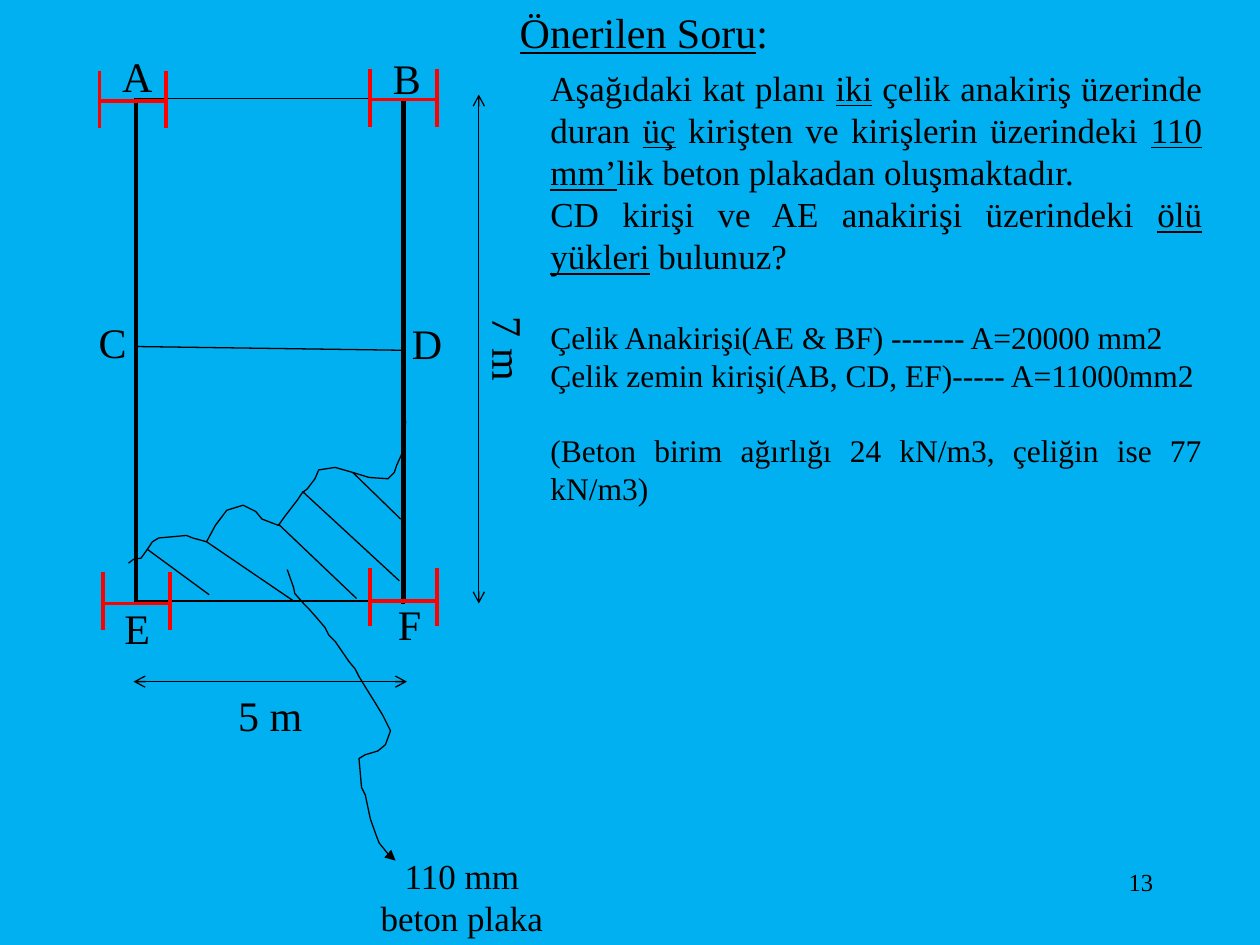
"""Build a slide with a steel floor plan and a dead load question."""
from typing import NamedTuple

from lxml.etree import SubElement
from pptx import Presentation
from pptx.dml.color import RGBColor
from pptx.enum.shapes import MSO_CONNECTOR as Conn, MSO_SHAPE as Kind
from pptx.enum.text import PP_ALIGN as Align
from pptx.oxml.ns import qn
from pptx.util import Inches, Pt

BLACK = RGBColor(0, 0, 0)
RED = RGBColor(255, 0, 0)
SKY = RGBColor(0, 176, 240)
FONT = "Times New Roman"


class Label(NamedTuple):
    text: str
    left: float
    top: float
    width: float = 0.86
    height: float = 0.51
    size: int = 24
    align: Align = Align.CENTER
    vert: str = "horz"


class Line(NamedTuple):
    x1: float
    y1: float
    x2: float
    y2: float
    width: float = 0.75
    color: RGBColor = BLACK
    head: str = ""
    tail: str = ""


class Para(NamedTuple):
    text: str
    size: int
    gap: float = 0


class Beam(NamedTuple):
    left: float
    top: float
    mid: float


LABELS = [
    Label("110 mm beton plaka", 2.79, 6.73, 1.75, 0.77, 20),
    Label("A", 0.66, 0.35),
    Label("B", 2.8, 0.37),
    Label("C", 0.28, 2.46, 1.23),
    Label("D", 2.96, 2.47),
    Label("E", 0.66, 4.73),
    Label("F", 2.82, 4.7),
    Label("7 m", 3.68, 2.27, 0.61, 1, vert="vert"),
    Label("5 m", 1.39, 5.42, 1.51),
    Label("_Önerilen Soru_:", 3.35, 0, 3.52),
    Label("13", 7.17, 6.83, 2.08, 0.5, 14, Align.RIGHT),
]
LINES = [
    Line(3.2, 2.78, 1.07, 2.75),
    Line(3.2, 0.79, 3.2, 4.79, 2.25),
    Line(1.08, 0.78, 1.08, 4.78, 2.25),
    Line(3.8, 0.75, 3.8, 4.79, head="arrow", tail="arrow"),
    Line(3.23, 5.41, 1.06, 5.41, head="arrow", tail="arrow"),
    Line(3.18, 4.12, 2.8, 3.75),
    Line(3.17, 4.61, 2.4, 3.9),
    Line(2.83, 4.75, 2.21, 4.16),
    Line(2.33, 4.77, 1.64, 4.3),
    Line(1.66, 4.72, 1.17, 4.36),
]
BEAMS = [
    Beam(0.79, 0.56, 0.8),
    Beam(2.94, 0.55, 0.79),
    Beam(0.82, 4.54, 4.79),
    Beam(2.94, 4.51, 4.77),
]
EDGE = [
    (3.22, 3.34), (3.2, 3.58), (3.15, 3.69), (3.13, 3.75), (3.08, 3.8),
    (2.93, 3.79), (2.8, 3.75), (2.66, 3.71), (2.53, 3.73), (2.5, 3.8),
    (2.44, 3.88), (2.4, 3.91), (2.36, 3.97), (2.26, 4.1), (2.21, 4.17),
    (2.08, 4.12), (2.03, 4.06), (1.93, 4.01), (1.8, 4.05), (1.71, 4.17),
    (1.64, 4.3), (1.53, 4.27), (1.48, 4.25), (1.26, 4.27), (1.21, 4.3),
    (1.17, 4.36), (1.12, 4.43), (1.06, 4.44), (1.02, 4.47),
]
LEADER = [
    (2.28, 4.52), (2.33, 4.66), (2.34, 4.71), (2.41, 4.79), (2.45, 4.83),
    (2.52, 4.91), (2.58, 4.98), (2.61, 5.04), (2.66, 5.09), (2.77, 5.25),
    (2.82, 5.31), (2.85, 5.37), (2.93, 5.5), (2.98, 5.58), (3.04, 5.68),
    (3.1, 5.8), (3.06, 5.91), (3, 5.96), (2.9, 5.99), (2.85, 6.02),
    (2.87, 6.25), (2.9, 6.31), (2.94, 6.5), (2.99, 6.64), (3.01, 6.69),
    (3.09, 6.79), (3.14, 6.83),
]
BODY = [
    Para("Aşağıdaki kat planı _iki_ çelik anakiriş üzerinde duran _üç_ kirişten ve "
         "kirişlerin üzerindeki _110 mm’_lik beton plakadan oluşmaktadır.", 20),
    Para("CD kirişi ve AE anakirişi üzerindeki _ölü yükleri_ bulunuz?", 20),
    Para("Çelik Anakirişi(AE & BF) ------- A=20000 mm2", 18, 23.5),
    Para("Çelik zemin kirişi(AB, CD, EF)----- A=11000mm2", 18),
    Para("(Beton birim ağırlığı 24 kN/m3, çeliğin ise 77 kN/m3)", 18, 21.7),
]


def write(par, text: str, *, size: int, align: Align, gap: float = 0) -> None:
    """Fill a paragraph, underlining what stands between underscores."""
    par.alignment = align
    par.space_before = Pt(gap)
    for i, part in enumerate(text.split("_")):
        if part:
            run = par.add_run()
            run.text = part
            font = run.font
            font.name, font.size, font.underline = FONT, Pt(size), i % 2 == 1
            font.color.rgb = BLACK


def add_box(shapes, left: float, top: float, width: float, height: float):
    """Add a wrapped text box and return its frame."""
    box = shapes.add_textbox(Inches(left), Inches(top), Inches(width), Inches(height))
    box.text_frame.word_wrap = True
    return box.text_frame


def draw_label(shapes, label: Label) -> None:
    """Draw a label of one paragraph."""
    frame = add_box(shapes, label.left, label.top, label.width, label.height)
    write(frame.paragraphs[0], label.text, size=label.size, align=label.align)
    frame._txBody.find(qn("a:bodyPr")).set("vert", label.vert)


def draw_body(shapes, paras: list[Para]) -> None:
    """Draw the question text."""
    frame = add_box(shapes, 4.27, 0.48, 5.37, 3.64)
    for i, para in enumerate(paras):
        par = frame.add_paragraph() if i else frame.paragraphs[0]
        write(par, para.text, size=para.size, align=Align.JUSTIFY, gap=para.gap)


def style(line, width: float, color: RGBColor, head: str = "", tail: str = "") -> None:
    """Set the stroke and the arrowheads of a line."""
    line.width = Pt(width)
    line.color.rgb = color
    for tag, end in (("a:headEnd", head), ("a:tailEnd", tail)):
        if end:
            SubElement(line._get_or_add_ln(), qn(tag)).set("type", end)


def draw_line(shapes, spec: Line) -> None:
    """Draw a straight line."""
    ends = [Inches(v) for v in spec[:4]]
    link = shapes.add_connector(Conn.STRAIGHT, *ends)
    style(link.line, spec.width, spec.color, spec.head, spec.tail)
    SubElement(link._element.spPr, qn("a:effectLst"))


def draw_beam(shapes, beam: Beam) -> None:
    """Draw a red I-section from two flanges and a web."""
    x, top, mid = beam
    for flange in (x + 0.53, x):
        draw_line(shapes, Line(flange, top + 0.46, flange, top, 2.25, RED))
    draw_line(shapes, Line(x + 0.51, mid, x, mid, 2.25, RED))


def outline(shape, tail: str = "") -> None:
    """Leave a shape with only a thin black outline."""
    shape.fill.background()
    shape.shadow.inherit = False
    style(shape.line, 0.75, BLACK, tail=tail)


def draw_path(shapes, pts: list, tail: str = "") -> None:
    """Draw an open freehand line through the points."""
    first, *rest = [(Inches(x), Inches(y)) for x, y in pts]
    pen = shapes.build_freeform(*first)
    pen.add_line_segments(rest, close=False)
    outline(pen.convert_to_shape(), tail)


def main() -> None:
    """Build and save the slide."""
    prs = Presentation()
    prs.slide_width, prs.slide_height = Inches(10), Inches(7.5)
    slide = prs.slides.add_slide(prs.slide_layouts[6])
    slide.background.fill.solid()
    slide.background.fill.fore_color.rgb = SKY
    shapes = slide.shapes
    plan = shapes.add_shape(Kind.RECTANGLE, Inches(0.16), Inches(1.71), Inches(3.99), Inches(2.13))
    plan.rotation = 90
    outline(plan)
    for line in LINES:
        draw_line(shapes, line)
    for beam in BEAMS:
        draw_beam(shapes, beam)
    draw_path(shapes, EDGE)
    draw_path(shapes, LEADER, "triangle")
    for label in LABELS:
        draw_label(shapes, label)
    draw_body(shapes, BODY)
    prs.save("out.pptx")


if __name__ == "__main__":
    main()
